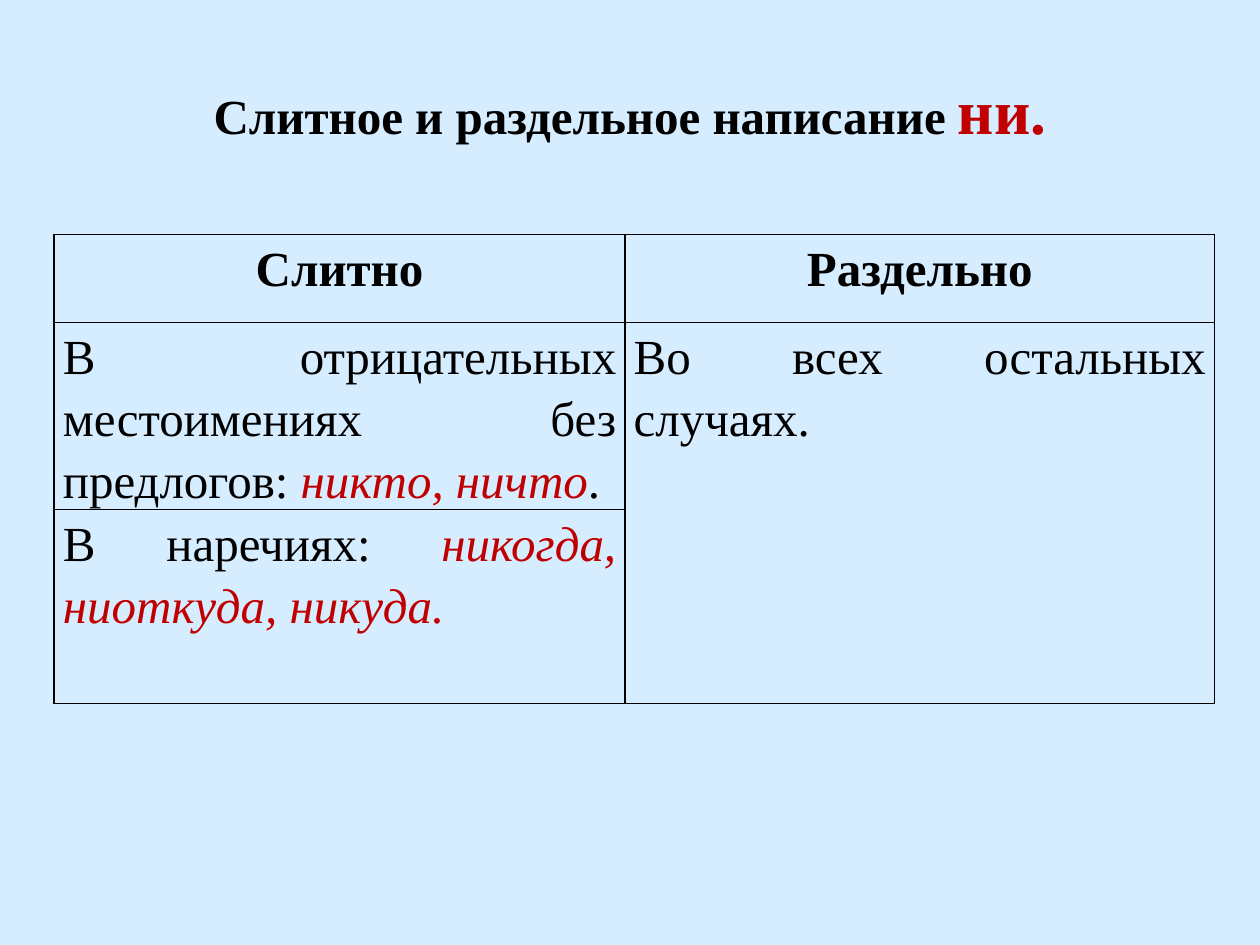
from lxml import etree
from pptx import Presentation
from pptx import util as u
from pptx.dml.color import RGBColor
from pptx.enum import text
from pptx.oxml.ns import qn

BACKGROUND = RGBColor(0xD6, 0xEC, 0xFF)
BLACK = RGBColor(0, 0, 0)
RED = RGBColor(0xC0, 0, 0)
FONT = "Times New Roman"
SIZE = 28

# Content: each text is a list of (wording, is it an example) pairs
TITLE = [("Слитное и раздельное написание ", False), ("ни.", True)]
HEADINGS = ["Слитно", "Раздельно"]
JOINED_RULES = [
    [("В отрицательных местоимениях без предлогов: ", False),
     ("никто, ничто", True), (".", False)],
    [("В наречиях: ", False), ("никогда, ниоткуда, никуда.", True)],
]
SEPARATE_RULE = [("Во всех остальных случаях.", False)]

# Layout in inches
TITLE_BOX = (0.75, 0.44, 8.5, 0.86)
TABLE_LEFT, TABLE_TOP = 0.43, 1.86
COLUMNS = [4.53, 4.68]
ROWS = [0.7, 1.48, 1.54]


def write(frame, pieces, align, bold=False):
    """Write the pieces as one paragraph, examples in red; return the runs."""
    paragraph = frame.paragraphs[0]
    paragraph.alignment = align
    font = paragraph.font
    font.name, font.size, font.bold = FONT, u.Pt(SIZE), bold
    runs = []
    for wording, example in pieces:
        run = paragraph.add_run()
        run.text = wording
        run.font.color.rgb = RED if example else BLACK
        run.font.italic = example and not bold
        runs.append(run)
    return runs


def write_cell(cell, pieces, align, bold=False):
    write(cell.text_frame, pieces, align, bold)
    cell.text_frame.paragraphs[0].line_spacing = 1.15


def format_cell(cell):
    """Thin black border, no fill, narrow side margins."""
    cell.margin_left = cell.margin_right = u.Inches(0.07)
    cell.margin_top = cell.margin_bottom = 0
    properties = cell._tc.get_or_add_tcPr()
    for side in ("a:lnL", "a:lnR", "a:lnT", "a:lnB"):
        line = etree.SubElement(properties, qn(side), w=str(u.Pt(1)))
        fill = etree.SubElement(line, qn("a:solidFill"))
        etree.SubElement(fill, qn("a:srgbClr"), val=str(BLACK))
    cell.fill.background()


def main():
    prs = Presentation()
    prs.slide_width, prs.slide_height = u.Inches(10), u.Inches(7.5)
    slide = prs.slides.add_slide(prs.slide_layouts[5])
    slide.background.fill.solid()
    slide.background.fill.fore_color.rgb = BACKGROUND

    # Title
    title = slide.shapes.title
    title.left, title.top, title.width, title.height = map(u.Inches, TITLE_BOX)
    title.text_frame.vertical_anchor = text.MSO_ANCHOR.MIDDLE
    particle = write(title.text_frame, TITLE, text.PP_ALIGN.CENTER, bold=True)[-1]
    particle.font.size = u.Pt(36)

    # Table grid
    frame = slide.shapes.add_table(
        len(ROWS), len(COLUMNS), u.Inches(TABLE_LEFT), u.Inches(TABLE_TOP),
        u.Inches(sum(COLUMNS)), u.Inches(sum(ROWS)))
    rules = frame.table
    rules.horz_banding = rules.first_row = False
    for column, width in zip(rules.columns, COLUMNS):
        column.width = u.Inches(width)
    for row, height in zip(rules.rows, ROWS):
        row.height = u.Inches(height)
    for cell in rules.iter_cells():
        format_cell(cell)
    rules.cell(1, 1).merge(rules.cell(2, 1))

    # Table wording
    for column, heading in enumerate(HEADINGS):
        write_cell(rules.cell(0, column), [(heading, False)],
                   text.PP_ALIGN.CENTER, bold=True)
    for row, rule in enumerate(JOINED_RULES, start=1):
        write_cell(rules.cell(row, 0), rule, text.PP_ALIGN.JUSTIFY)
    write_cell(rules.cell(1, 1), SEPARATE_RULE, text.PP_ALIGN.JUSTIFY)

    prs.save("out.pptx")


if __name__ == "__main__":
    main()
